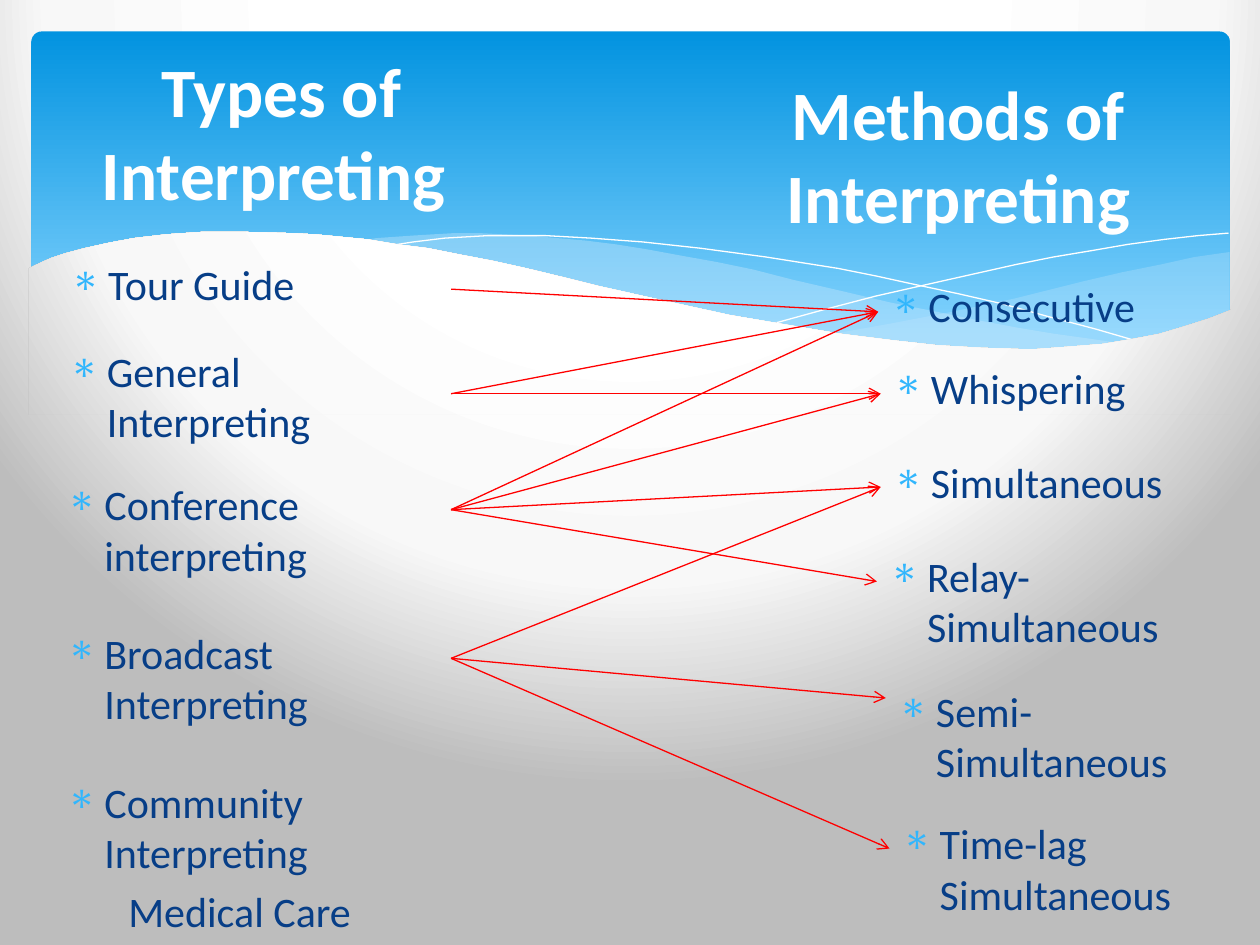
"""Build a slide that links types of interpreting to methods of interpreting."""
from dataclasses import dataclass

from lxml import etree
from pptx import Presentation
from pptx import util as u
from pptx.dml import color
from pptx.enum import shapes, text
from pptx.oxml import ns

FONT = "Calibri"
NAVY, SKY, WHITE, RED, PALE = "073E87", "31B6FD", "FFFFFF", "FF0000", "C6E7FC"
GLOW = ((40, WHITE), (74, "F8F8F8"), (100, "BDBDBD"))
BANNER = ((0, "0293E0"), (90, "83D3FE"))
Points = list[tuple[float, float]]


@dataclass
class Entry:
    name: str
    left: float
    top: float
    width: float
    height: float = 0.59
    detail: str = ""

    @property
    def middle(self) -> float:
        return self.top + self.height / 2


@dataclass
class Wave:
    points: Points
    opacity: int


TYPES = [
    Entry("Tour Guide", 0.46, 2, 3.12),
    Entry("General Interpreting", 0.45, 2.69, 3.14, 0.87),
    Entry("Conference interpreting", 0.43, 3.75, 3.15),
    Entry("Broadcast Interpreting", 0.43, 4.93, 3.15),
    Entry("Community Interpreting", 0.43, 6.11, 3.15, 0.94, "Medical Care"),
]
METHODS = [
    Entry("Consecutive", 6.97, 2.18, 2.68),
    Entry("Whispering", 6.99, 2.83, 2.68),
    Entry("Simultaneous", 6.99, 3.57, 2.68),
    Entry("Relay-Simultaneous", 6.96, 4.32, 3.04),
    Entry("Semi-Simultaneous", 7.03, 5.39, 2.91, 0.3),
    Entry("Time-lag Simultaneous", 7.06, 6.44, 2.91),
]
TITLES = [
    Entry("Types of Interpreting ", 0.42, 0.36, 3.63, 1.37),
    Entry("Methods of Interpreting", 5.79, 0.54, 3.63, 1.37),
]
LINKS = {0: (0,), 1: (0, 1), 2: (1, 0, 3, 2), 3: (2, 4, 5)}
LINK_START = 3.58

WAVES = [
    Wave([(9.76, 2), (9.48, 2.04), (9.21, 2.1), (8.91, 2.16), (8.61, 2.23), (8.05, 2.37),
          (7.53, 2.48), (7.06, 2.57), (6.61, 2.65), (6.91, 2.69), (7.19, 2.72), (7.45, 2.75),
          (7.69, 2.77), (8.03, 2.78), (8.35, 2.77), (8.63, 2.75), (8.89, 2.72), (9.13, 2.67),
          (9.35, 2.62), (9.49, 2.57), (9.63, 2.52), (9.76, 2.47)], 29),
    Wave([(8.93, 2.73), (8.66, 2.69), (8.37, 2.65), (8.07, 2.6), (7.75, 2.54), (7.41, 2.47),
          (7.06, 2.4), (6.68, 2.31), (6.29, 2.22), (5.98, 2.14), (5.69, 2.08), (5.41, 2.03),
          (5.14, 1.98), (4.89, 1.94), (4.65, 1.91), (4.42, 1.89), (4.2, 1.87), (3.99, 1.86),
          (3.8, 1.85), (3.61, 1.85), (3.28, 1.87), (2.99, 1.89), (2.86, 1.91), (3.23, 1.96),
          (3.62, 2.03), (4.04, 2.11), (4.49, 2.22), (4.91, 2.32), (5.3, 2.4), (5.66, 2.48),
          (6.01, 2.55), (6.34, 2.61), (6.65, 2.66), (6.95, 2.7), (7.22, 2.74), (7.48, 2.76),
          (7.73, 2.77), (7.96, 2.78), (8.28, 2.78), (8.57, 2.77), (8.76, 2.75)], 40),
]
CRESTS: list[Points] = [
    [(3.09, 1.95), (3.28, 1.92), (3.53, 1.89), (3.87, 1.87), (4.33, 1.87), (4.69, 1.89),
     (5.1, 1.92), (5.56, 1.97), (6.08, 2.04), (6.65, 2.13), (6.95, 2.19), (7.27, 2.26),
     (7.6, 2.33), (7.95, 2.41), (8.31, 2.51), (8.69, 2.61), (9.07, 2.72)],
    [(6.13, 2.57), (6.53, 2.46), (6.95, 2.35), (7.48, 2.23), (8.06, 2.1), (8.36, 2.04),
     (8.66, 1.99), (8.95, 1.94), (9.24, 1.9), (9.51, 1.87), (9.75, 1.85)],
]
SHORE: Points = [
    (9.77, 2.46), (9.59, 2.53), (9.4, 2.59), (9.2, 2.65), (8.99, 2.69), (8.75, 2.73),
    (8.5, 2.75), (8.23, 2.77), (8.09, 2.77), (7.78, 2.76), (7.44, 2.74), (7.08, 2.7),
    (6.68, 2.65), (6.26, 2.58), (5.79, 2.5), (5.29, 2.39), (4.75, 2.27), (4.47, 2.2),
    (4.18, 2.13), (3.91, 2.07), (3.65, 2.02), (3.4, 1.97), (3.16, 1.94), (2.92, 1.9),
    (2.71, 1.88), (2.5, 1.86), (2.3, 1.85), (1.93, 1.84), (1.61, 1.84), (1.32, 1.86),
    (1.06, 1.89), (0.85, 1.93), (0.67, 1.97), (0.52, 2.01), (0.4, 2.05), (0.29, 2.1),
    (0.23, 2.13), (0.23, 3.29), (9.77, 3.29),
]


def rgb(value: str) -> color.RGBColor:
    return color.RGBColor.from_string(value)


def add_child(parent, tag: str, **attributes):
    return etree.SubElement(parent, ns.qn(tag), attributes)


def set_gradient(fill, owner, stops, circular: bool = False) -> None:
    fill.solid()
    solid = owner.find(ns.qn("a:solidFill"))
    gradient = etree.Element(ns.qn("a:gradFill"), rotWithShape="1")
    stop_list = add_child(gradient, "a:gsLst")
    for position, value in stops:
        stop = add_child(stop_list, "a:gs", pos=str(position * 1000))
        add_child(stop, "a:srgbClr", val=value)
    if circular:
        spread = add_child(gradient, "a:path", path="circle")
        add_child(spread, "a:fillToRect", l="20000", t="-40000", r="20000", b="140000")
    else:
        add_child(gradient, "a:lin", ang="5400000", scaled="0")
    owner.replace(solid, gradient)


def draw_outline(slide, points: Points, closed: bool = True):
    corners = [(u.Inches(x), u.Inches(y)) for x, y in points]
    builder = slide.shapes.build_freeform(*corners[0])
    builder.add_line_segments(corners[1:], close=closed)
    outline = builder.convert_to_shape()
    outline.shadow.inherit = False
    outline.line.fill.background()
    return outline


def draw_banner(slide) -> None:
    banner = slide.shapes.add_shape(shapes.MSO_SHAPE.ROUNDED_RECTANGLE, u.Inches(0.25),
                                    u.Inches(0.25), u.Inches(9.51), u.Inches(2.7))
    banner.adjustments[0] = 0.03
    banner.shadow.inherit = False
    banner.line.fill.background()
    set_gradient(banner.fill, banner._element.spPr, BANNER)
    for wave in WAVES:
        ribbon = draw_outline(slide, wave.points)
        ribbon.fill.solid()
        ribbon.fill.fore_color.rgb = rgb(PALE)
        tint = ribbon._element.spPr.find(".//" + ns.qn("a:srgbClr"))
        add_child(tint, "a:alpha", val=str(wave.opacity * 1000))
    for points in CRESTS:
        crest = draw_outline(slide, points, closed=False)
        crest.fill.background()
        crest.line.color.rgb = rgb(WHITE)
        crest.line.width = u.Pt(0)
    shore = draw_outline(slide, SHORE)
    shore._element.set("useBgFill", "1")


def write(slide, entry: Entry, size: float, ink: str, bold: bool = False):
    frame = slide.shapes.add_textbox(u.Inches(entry.left), u.Inches(entry.top),
                                     u.Inches(entry.width), u.Inches(entry.height)).text_frame
    frame.word_wrap = True
    frame.text = entry.name
    if entry.detail:
        frame.add_paragraph().text = entry.detail
    for paragraph in frame.paragraphs:
        font = paragraph.runs[0].font
        font.name, font.size, font.bold = FONT, u.Pt(size), bold
        font.color.rgb = rgb(ink)
    return frame


def draw_title(slide, entry: Entry) -> None:
    frame = write(slide, entry, 39.6, WHITE, bold=True)
    frame.vertical_anchor = text.MSO_ANCHOR.MIDDLE
    frame.paragraphs[0].alignment = text.PP_ALIGN.CENTER


def draw_entry(slide, entry: Entry) -> None:
    name, *details = write(slide, entry, 24, NAVY).paragraphs
    for paragraph in (name, *details):
        paragraph.space_before = u.Pt(4.8)
    layout = name._p.get_or_add_pPr()
    layout.set("marL", str(u.Inches(0.3)))
    layout.set("indent", str(u.Inches(-0.3)))
    add_child(add_child(layout, "a:buClr"), "a:srgbClr", val=SKY)
    add_child(layout, "a:buChar", char="∗")
    for detail in details:
        detail._p.get_or_add_pPr().set("marL", str(u.Inches(0.49)))


def draw_link(slide, kind: Entry, method: Entry) -> None:
    link = slide.shapes.add_connector(shapes.MSO_CONNECTOR.STRAIGHT, u.Inches(LINK_START),
                                      u.Inches(kind.middle), u.Inches(method.left),
                                      u.Inches(method.middle))
    link.line.color.rgb = rgb(RED)
    link.line.width = u.Pt(0.75)
    add_child(link.line._get_or_add_ln(), "a:tailEnd", type="arrow")
    add_child(link._element.spPr, "a:effectLst")


def main() -> None:
    deck = Presentation()
    deck.slide_width, deck.slide_height = u.Inches(10), u.Inches(7.5)
    slide = deck.slides.add_slide(deck.slide_layouts[6])
    backdrop = slide.background.fill
    backdrop.solid()
    set_gradient(backdrop, slide._element.find(".//" + ns.qn("p:bgPr")), GLOW, circular=True)
    draw_banner(slide)
    for title in TITLES:
        draw_title(slide, title)
    for entry in TYPES + METHODS:
        draw_entry(slide, entry)
    for kind, methods in LINKS.items():
        for method in methods:
            draw_link(slide, TYPES[kind], METHODS[method])
    deck.save("out.pptx")


if __name__ == "__main__":
    main()
